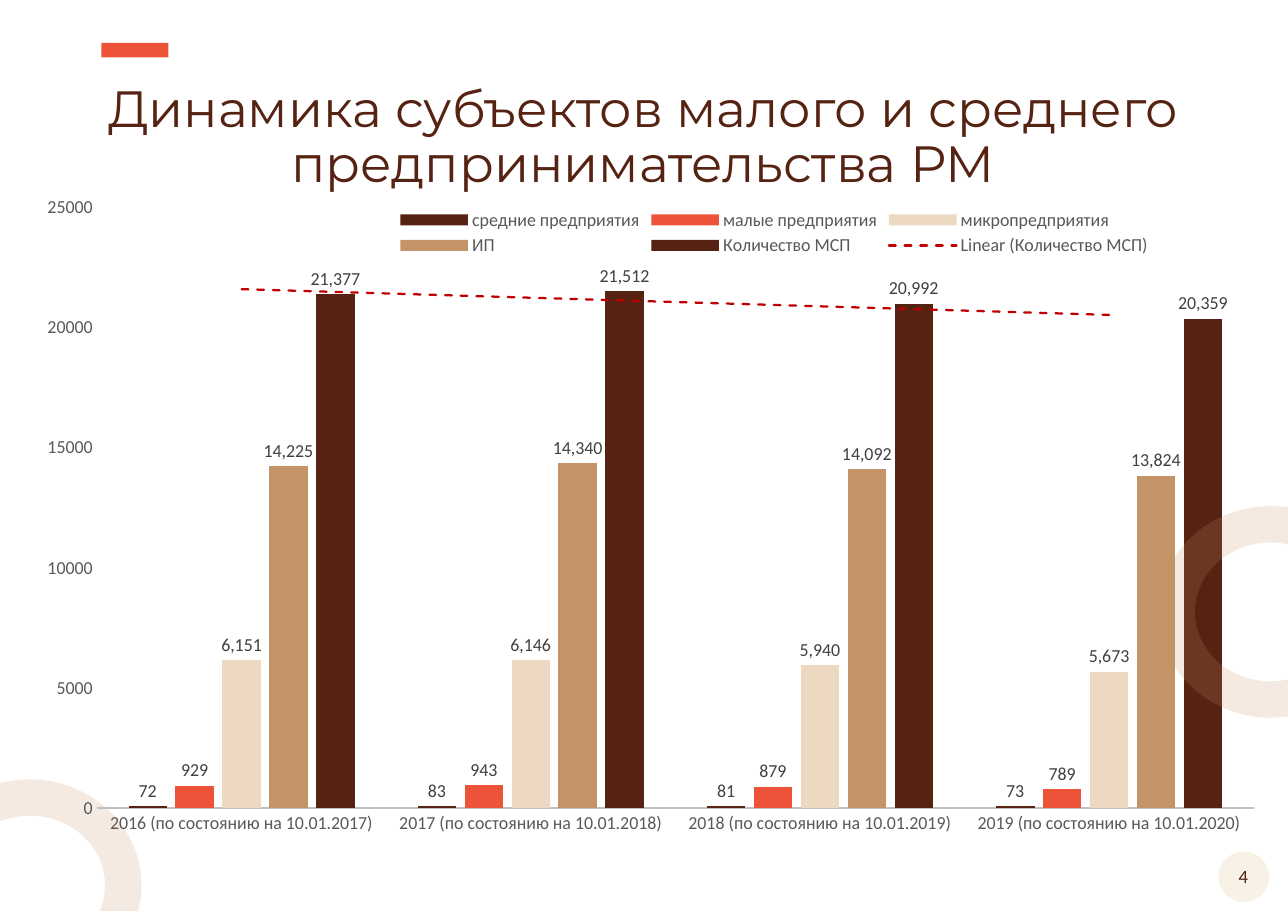
from lxml import etree
from pptx import Presentation
from pptx.chart.data import CategoryChartData
from pptx.dml.color import RGBColor
from pptx.enum.chart import XL_CHART_TYPE, XL_LABEL_POSITION, XL_LEGEND_POSITION, XL_TICK_MARK
from pptx.enum.shapes import MSO_SHAPE
from pptx.enum.text import MSO_ANCHOR, PP_ALIGN
from pptx.oxml import parse_xml
from pptx.oxml.ns import nsdecls, qn
from pptx.util import Pt

COLUMNS = XL_CHART_TYPE.COLUMN_CLUSTERED
OUTSIDE_END = XL_LABEL_POSITION.OUTSIDE_END
LEGEND_TOP = XL_LEGEND_POSITION.TOP
NO_TICK = XL_TICK_MARK.NONE
OVAL, RECTANGLE = MSO_SHAPE.OVAL, MSO_SHAPE.RECTANGLE
TOP, BOTTOM = MSO_ANCHOR.TOP, MSO_ANCHOR.BOTTOM
CENTER = PP_ALIGN.CENTER

COLORS = {
    "brown": "562212", "red": "ED5338", "sand": "EDD8C2", "tan": "C59368",
    "cream": "F7F2E5", "grey": "595959", "dark": "404040", "axis": "BFBFBF",
    "trend": "C00000",
}
TITLE = {"name": "Montserrat", "size": Pt(33.3)}
NUMBER = {"name": "Calibri", "size": Pt(12.3)}
CHART_TEXT = {"name": "Calibri", "size": Pt(12)}

DATES = [f"{year} (по состоянию на 10.01.{year + 1})" for year in range(2016, 2020)]
SERIES = [
    ("средние предприятия", (72, 83, 81, 73), "brown", "General"),
    ("малые предприятия", (929, 943, 879, 789), "red", "General"),
    ("микропредприятия", (6151, 6146, 5940, 5673), "sand", "#,##0"),
    ("ИП", (14225, 14340, 14092, 13824), "tan", "#,##0"),
    ("Количество МСП", (21377, 21512, 20992, 20359), "brown", "#,##0"),
]
CHART_BOX = (31, 87.1, 799.2, 485.3)
PLOT_BOX = (11.2, 48.5, 776.8, 392.6)
LEGEND_BOX = (211, 47, 510, 36)
RING_SIZE = (122.4, 114.5)


def set_attributes(target, values):
    for name, value in values.items():
        setattr(target, name, value)


class SlideBuilder:
    def __init__(self, slide):
        self.slide = slide

    def color(self, name):
        return RGBColor.from_string(COLORS[name])

    def font(self, font, values, color):
        set_attributes(font, values)
        font.color.rgb = self.color(color)

    def fill(self, fill, color):
        fill.solid()
        fill.fore_color.rgb = self.color(color)

    def shape(self, kind, box, color):
        shape = self.slide.shapes.add_shape(kind, *map(Pt, box))
        shape.shadow.inherit = False
        self.fill(shape.fill, color)
        shape.line.fill.background()
        return shape

    def ring(self, left, top):
        shape = self.shape(OVAL, (left, top, *RING_SIZE), "tan")
        shape.fill.background()
        self.fill(shape.line.fill, "tan")
        shape.line.width = Pt(23.75)
        line_color = shape.element.xpath(".//a:ln//a:srgbClr")[0]
        etree.SubElement(line_color, qn("a:alpha"), val="18000")

    def text(self, box, text, values, anchor=TOP, spacing=1.0):
        frame = self.slide.shapes.add_textbox(*map(Pt, box)).text_frame
        set_attributes(frame, {"word_wrap": True, "vertical_anchor": anchor})
        paragraph = frame.paragraphs[0]
        set_attributes(paragraph, {"alignment": CENTER, "line_spacing": spacing})
        run = paragraph.add_run()
        run.text = text
        self.font(run.font, values, "brown")

    def chart(self):
        data = CategoryChartData()
        data.categories = DATES
        for name, values, _, number_format in SERIES:
            data.add_series(name, values, number_format)
        chart = self.slide.shapes.add_chart(COLUMNS, *map(Pt, CHART_BOX), data).chart
        set_attributes(chart, {"has_title": False, "has_legend": True})
        self.font(chart.font, CHART_TEXT, "grey")
        plot = chart.plots[0]
        set_attributes(plot, {"gap_width": 164, "overlap": -22, "vary_by_categories": False})
        for series, (_, _, color, number_format) in zip(plot.series, SERIES):
            self.fill(series.format.fill, color)
            labels = series.data_labels
            set_attributes(labels, {
                "show_value": True, "position": OUTSIDE_END,
                "number_format": number_format, "number_format_is_linked": False,
            })
            self.font(labels.font, CHART_TEXT, "dark")
        self.trend_line(chart)
        self.axes(chart)
        set_attributes(chart.legend, {"position": LEGEND_TOP, "include_in_layout": False})
        self.font(chart.legend.font, CHART_TEXT, "grey")
        self.layout(chart, "c:plotArea", 0, PLOT_BOX, '<c:layoutTarget val="inner"/>')
        self.layout(chart, "c:legend", 1, LEGEND_BOX)

    def axes(self, chart):
        for axis in (chart.category_axis, chart.value_axis):
            set_attributes(axis, {
                "major_tick_mark": NO_TICK, "minor_tick_mark": NO_TICK,
                "has_major_gridlines": False,
            })
            set_attributes(axis.tick_labels, {
                "number_format": "General", "number_format_is_linked": False,
            })
            self.font(axis.tick_labels.font, CHART_TEXT, "grey")
        category_line = chart.category_axis.format.line
        self.fill(category_line.fill, "axis")
        category_line.width = Pt(1.5)
        set_attributes(chart.value_axis, {
            "minimum_scale": 0, "maximum_scale": 25000, "major_unit": 5000,
        })
        chart.value_axis.format.line.fill.background()

    def trend_line(self, chart):
        trend = parse_xml(
            f'<c:trendline {nsdecls("c", "a")}><c:spPr><a:ln w="{Pt(1.5)}" cap="rnd">'
            f'<a:solidFill><a:srgbClr val="{COLORS["trend"]}"/></a:solidFill>'
            '<a:prstDash val="dash"/></a:ln></c:spPr><c:trendlineType val="linear"/>'
            '<c:dispRSqr val="0"/><c:dispEq val="0"/></c:trendline>'
        )
        chart.element.xpath(".//c:ser[last()]/c:cat")[0].addprevious(trend)

    def layout(self, chart, tag, index, box, target=""):
        parent = chart.element.xpath(f".//{tag}")[0]
        for previous in parent.findall(qn("c:layout")):
            parent.remove(previous)
        places = zip("xywh", box, CHART_BOX[2:] * 2)
        values = "".join(f'<c:{name} val="{part / whole:.4f}"/>' for name, part, whole in places)
        parent.insert(index, parse_xml(
            f'<c:layout {nsdecls("c")}><c:manualLayout>{target}<c:xMode val="edge"/>'
            f'<c:yMode val="edge"/>{values}</c:manualLayout></c:layout>'
        ))


def main():
    presentation = Presentation()
    set_attributes(presentation, {"slide_width": Pt(841.68), "slide_height": Pt(595.44)})
    builder = SlideBuilder(presentation.slides.add_slide(presentation.slide_layouts[6]))
    builder.shape(OVAL, (796.3, 556.6, 33.1, 33.1), "cream")
    builder.text((794.2, 561.6, 36.7, 22.3), "4", NUMBER)
    builder.shape(RECTANGLE, (66.2, 28.1, 43.9, 9.4), "red")
    builder.ring(-41.8, 521.3)
    builder.text(
        (57.6, 31.7, 725.8, 98.6),
        "Динамика субъектов малого и среднего предпринимательства РМ",
        TITLE, BOTTOM, 0.9,
    )
    builder.chart()
    builder.ring(769, 342.7)
    presentation.save("out.pptx")


if __name__ == "__main__":
    main()
